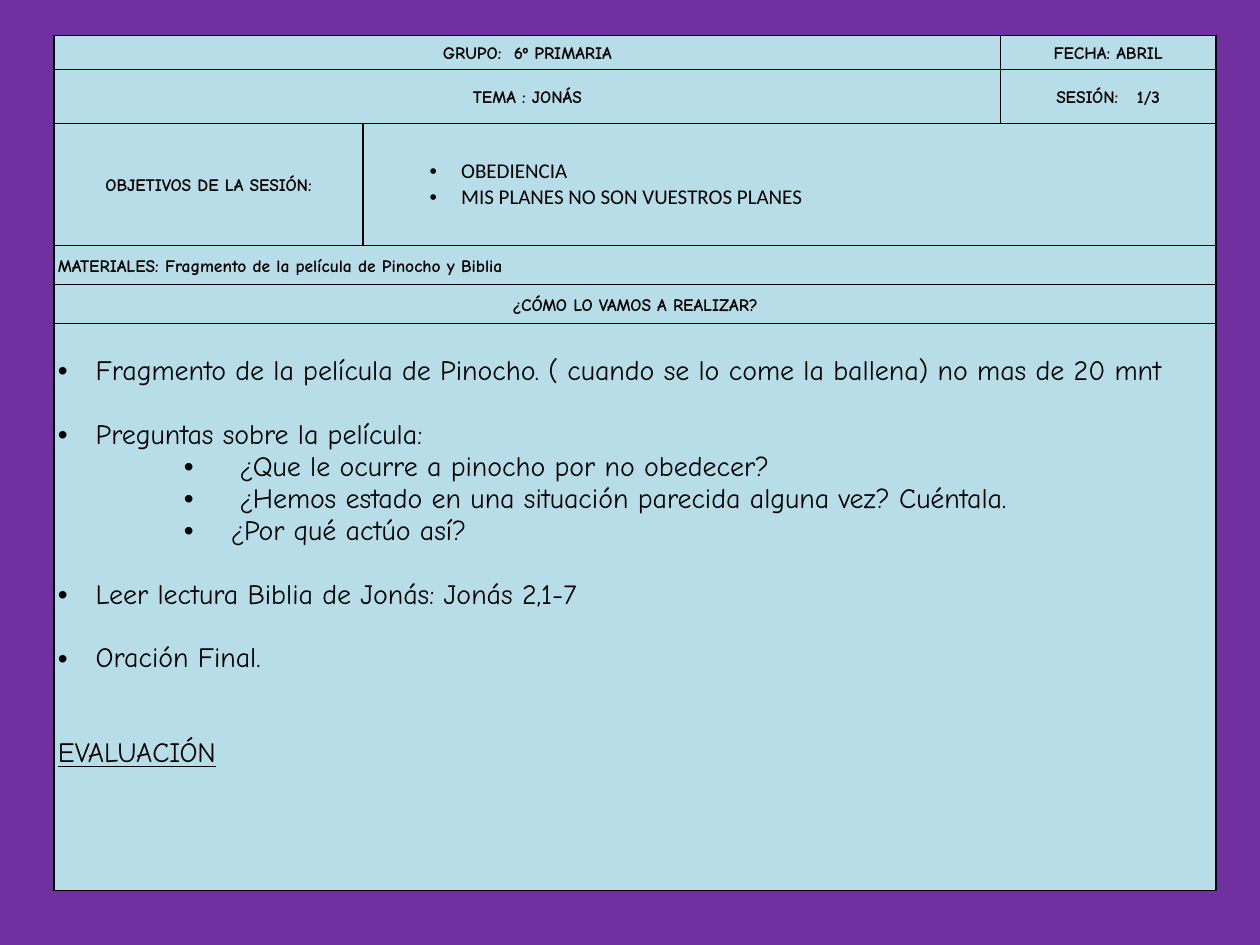
from lxml import etree
from pptx import Presentation
from pptx.dml.color import RGBColor
from pptx.enum import text
from pptx.oxml import ns
from pptx.util import Inches, Pt

PURPLE = RGBColor(0x70, 0x30, 0xA0)
PALE_BLUE = RGBColor(0xB7, 0xDE, 0xE8)
BLACK = RGBColor(0, 0, 0)

COLS = [2.45, 5.06, 1.71]
ROWS = [0.27, 0.43, 0.97, 0.31, 0.31, 4.5]
CENTER = text.PP_ALIGN.CENTER
LABEL = {"name": "Comic Neue", "size": Pt(10), "bold": True}
GOAL = {"name": "Calibri", "size": Pt(12), "bold": False}
STEP = {"name": "Comic Neue", "size": Pt(16), "bold": False}

# row, first column, last column, text, alignment
LABELS = [
    (0, 0, 1, "GRUPO:  6º PRIMARIA", CENTER),
    (0, 2, 2, "FECHA: ABRIL", CENTER),
    (1, 0, 1, "TEMA : JONÁS", CENTER),
    (1, 2, 2, "SESIÓN:   1/3", CENTER),
    (2, 0, 0, "OBJETIVOS DE LA SESIÓN:", CENTER),
    (3, 0, 2, "MATERIALES: Fragmento de la película de Pinocho y Biblia", None),
    (4, 0, 2, "¿CÓMO LO VAMOS A REALIZAR?", CENTER),
]
GOALS = ["OBEDIENCIA", "MIS PLANES NO SON VUESTROS PLANES"]
# text, bullet position, gap from bullet to text, space before in points
STEPS = [
    ("Fragmento de la película de Pinocho. ( cuando se lo come la ballena) no mas de 20 mnt", 0, 0.3, 0),
    ("Preguntas sobre la película:", 0, 0.3, 18),
    ("¿Que le ocurre a pinocho por no obedecer?", 1, 0.44, 0),
    ("¿Hemos estado en una situación parecida alguna vez? Cuéntala.", 1, 0.44, 0),
    ("¿Por qué actúo así?", 1, 0.37, 0),
    ("Leer lectura Biblia de Jonás: Jonás 2,1-7", 0, 0.3, 18),
    ("Oración Final.", 0, 0.3, 18),
]


def set_borders(cell):
    tc_pr = cell._tc.get_or_add_tcPr()
    for i, side in enumerate("LRTB"):
        ln = etree.Element(ns.qn(f"a:ln{side}"), w=str(Pt(1)))
        fill = etree.SubElement(ln, ns.qn("a:solidFill"))
        etree.SubElement(fill, ns.qn("a:srgbClr"), val=str(BLACK))
        tc_pr.insert(i, ln)


def set_bullet(p, left, gap):
    p_pr = p._p.get_or_add_pPr()
    p_pr.set("marL", str(Inches(left + gap)))
    p_pr.set("indent", str(Inches(-gap)))
    etree.SubElement(p_pr, ns.qn("a:buFont"), typeface="Arial")
    etree.SubElement(p_pr, ns.qn("a:buChar"), char="•")


def add_text(tf, words, font, **paragraph_format):
    """Write a paragraph, using the empty first one when it is free."""
    p = tf.paragraphs[0] if not tf.text else tf.add_paragraph()
    for name, value in paragraph_format.items():
        setattr(p, name, value)
    r = p.add_run()
    r.text = words
    for name, value in font.items():
        setattr(r.font, name, value)
    r.font.color.rgb = BLACK
    return p


def add_grid(s, left, top):
    frame = s.shapes.add_table(len(ROWS), len(COLS), Inches(left), Inches(top),
                               Inches(sum(COLS)), Inches(sum(ROWS)))
    table = frame.table
    table.first_row = table.horz_banding = False
    for col, width in zip(table.columns, COLS):
        col.width = Inches(width)
    for row, height in zip(table.rows, ROWS):
        row.height = Inches(height)
    cell_format = {"margin_left": Inches(0.03), "margin_right": Inches(0.03),
                   "margin_top": 0, "margin_bottom": 0,
                   "vertical_anchor": text.MSO_ANCHOR.MIDDLE}
    for cell in table.iter_cells():
        for name, value in cell_format.items():
            setattr(cell, name, value)
        cell.fill.solid()
        cell.fill.fore_color.rgb = PALE_BLUE
        set_borders(cell)
    return table


def span(table, row, first, last):
    cell = table.cell(row, first)
    if last > first:
        cell.merge(table.cell(row, last))
    return cell


def fill_goals(cell):
    for goal in GOALS:
        set_bullet(add_text(cell.text_frame, goal, GOAL), 0.5, 0.25)


def fill_steps(cell):
    cell.vertical_anchor = text.MSO_ANCHOR.TOP
    cell.margin_top = Inches(0.25)
    for words, left, gap, before in STEPS:
        p = add_text(cell.text_frame, words, STEP, space_before=Pt(before))
        set_bullet(p, left, gap)
    add_text(cell.text_frame, "EVALUACIÓN", {**STEP, "underline": True},
             space_before=Pt(36))


def add_session_plan(s, left, top):
    table = add_grid(s, left, top)
    for row, first, last, words, alignment in LABELS:
        cell = span(table, row, first, last)
        add_text(cell.text_frame, words, LABEL, alignment=alignment,
                 line_spacing=1.15)
    fill_goals(span(table, 2, 1, 2))
    fill_steps(span(table, 5, 0, 2))


def main():
    prs = Presentation()
    prs.slide_width, prs.slide_height = Inches(10), Inches(7.5)
    s = prs.slides.add_slide(prs.slide_layouts[6])
    s.background.fill.solid()
    s.background.fill.fore_color.rgb = PURPLE
    add_session_plan(s, 0.43, 0.28)
    prs.save("out.pptx")


if __name__ == "__main__":
    main()
